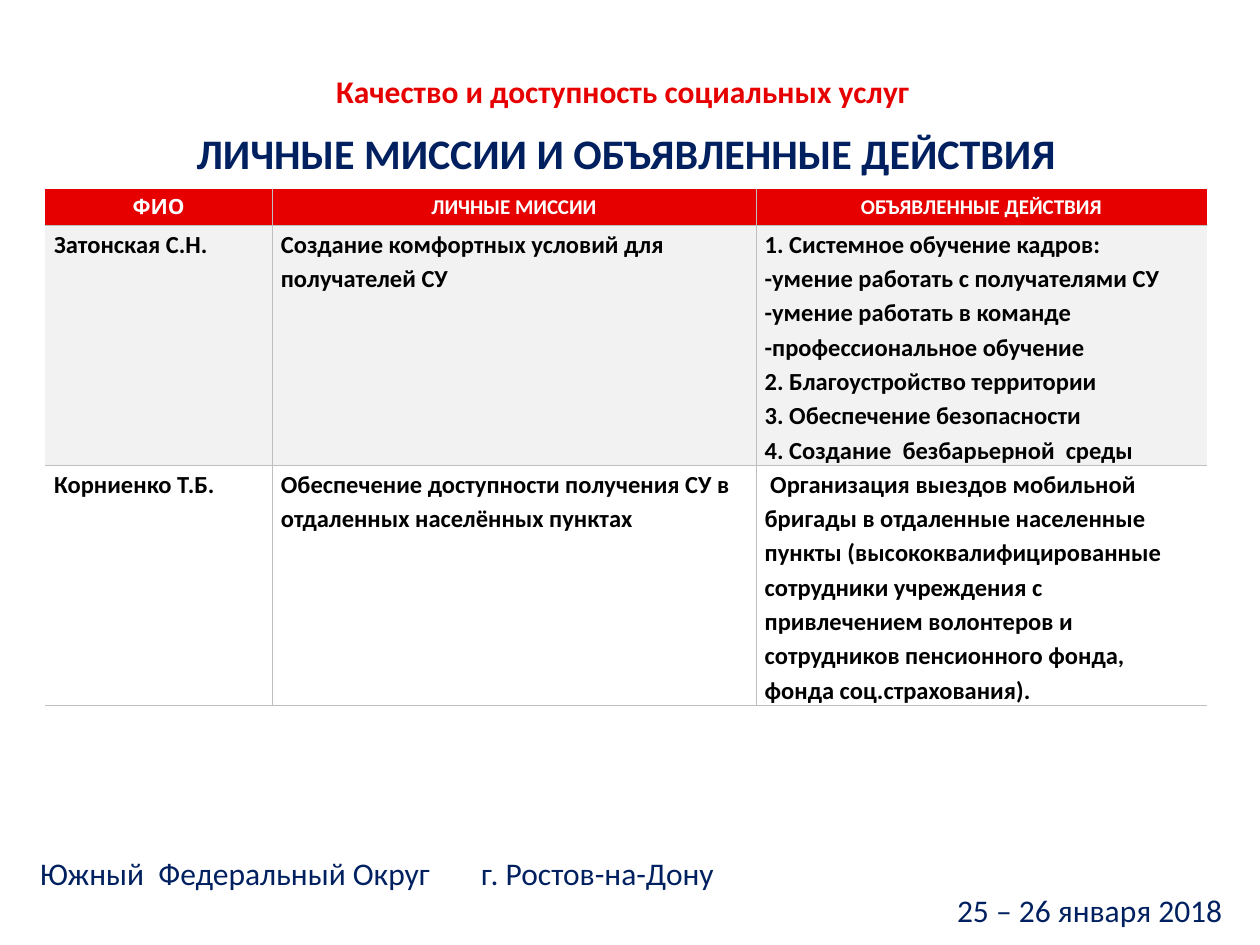
from lxml import etree
from pptx import Presentation
from pptx.dml.color import RGBColor
from pptx.enum.text import MSO_ANCHOR, MSO_AUTO_SIZE, PP_ALIGN
from pptx.oxml.ns import qn
from pptx.util import Inches, Pt

LEFT, MID, RIGHT = PP_ALIGN.LEFT, PP_ALIGN.CENTER, PP_ALIGN.RIGHT
TOP, CENTRE = MSO_ANCHOR.TOP, MSO_ANCHOR.MIDDLE
FIXED = MSO_AUTO_SIZE.NONE
WIDE, HIGH = Inches(10), Inches(7.5)
COLORS = {"red": "E60000", "navy": "002060", "white": "FFFFFF",
          "black": "000000", "band": "F2F2F2", "line": "BFBFBF"}
COLS = (19.52, 41.65, 38.83)
ROWS = (7.08, 46.46, 46.46)
HEADS = ("ФИО", "ЛИЧНЫЕ МИССИИ", "ОБЪЯВЛЕННЫЕ ДЕЙСТВИЯ")
PEOPLE = (
    ("Затонская С.Н.",
     "Создание комфортных условий для получателей СУ",
     "1. Системное обучение кадров:\n"
     "-умение работать с получателями СУ\n"
     "-умение работать в команде\n"
     "-профессиональное обучение\n"
     "2. Благоустройство территории\n"
     "3. Обеспечение безопасности\n"
     "4. Создание  безбарьерной  среды"),
    ("Корниенко Т.Б.",
     "Обеспечение доступности получения СУ в отдаленных населённых пунктах",
     " Организация выездов мобильной бригады в отдаленные населенные "
     "пункты (высококвалифицированные сотрудники учреждения с "
     "привлечением волонтеров и сотрудников пенсионного фонда, "
     "фонда соц.страхования)."),
)


def area(left, top, width, height):
    return (int(WIDE * left / 100), int(HIGH * top / 100),
            int(WIDE * width / 100), int(HIGH * height / 100))


def assign(item, values):
    for name, value in values.items():
        setattr(item, name, value)


def write(frame, text, color, size, bold=True, face="Calibri", **para):
    frame.text = text
    for line in frame.paragraphs:
        assign(line, para)
        for run in line.runs:
            assign(run.font, {"name": face, "size": Pt(size), "bold": bold})
            run.font.color.rgb = RGBColor.from_string(COLORS[color])


def heading(shape, box, text, color, size):
    assign(shape, dict(zip(("left", "top", "width", "height"), box)))
    frame = shape.text_frame
    assign(frame, {"word_wrap": False, "auto_size": FIXED,
                   "vertical_anchor": TOP})
    write(frame, text, color, size, alignment=LEFT)


def border(cell, sides):
    props = cell._tc.get_or_add_tcPr()
    for side in "LRTB":
        line = etree.SubElement(props, qn(f"a:ln{side}"), w=str(Pt(0.5)))
        if side in sides:
            fill = etree.SubElement(line, qn("a:solidFill"))
            etree.SubElement(fill, qn("a:srgbClr"), val=COLORS["line"])
        else:
            etree.SubElement(line, qn("a:noFill"))


def missions(slide, box):
    data = (HEADS, *PEOPLE)
    table = slide.shapes.add_table(len(ROWS), len(COLS), *box).table
    assign(table, {"first_row": False, "horz_banding": False})
    for col, share in zip(table.columns, COLS):
        col.width = int(box[2] * share / 100)
    for row, share in zip(table.rows, ROWS):
        row.height = int(box[3] * share / 100)
    for r, texts in enumerate(data):
        for c, text in enumerate(texts):
            cell = table.cell(r, c)
            head = r == 0
            pad = Inches(0.04 if head else 0)
            assign(cell, {"margin_left": Inches(0.07),
                          "margin_right": Inches(0.07),
                          "margin_top": pad, "margin_bottom": pad,
                          "vertical_anchor": CENTRE if head else TOP})
            border(cell, "B" + "T" * (r > 0) + "L" * (c > 0)
                   + "R" * (c < len(COLS) - 1))
            if r < 2:
                cell.fill.solid()
                tint = COLORS["red" if head else "band"]
                cell.fill.fore_color.rgb = RGBColor.from_string(tint)
            else:
                cell.fill.background()
            if head:
                write(cell.text_frame, text, "white", 12, alignment=MID,
                      face="Calibri" if c else "Cabin")
            else:
                write(cell.text_frame, text, "black", 14, alignment=LEFT,
                      line_spacing=1.15)


def footer(slide, box):
    frame = slide.shapes.add_textbox(*box).text_frame
    assign(frame, {"word_wrap": True, "vertical_anchor": CENTRE})
    write(frame, "Южный  Федеральный Округ\tг. Ростов-на-Дону\n"
          "25 – 26 января 2018", "navy", 18, bold=False)
    place, date = frame.paragraphs
    date.alignment = RIGHT
    props = place._p.get_or_add_pPr()
    props.set("marL", str(Inches(0.09)))
    props.set("indent", "0")
    tabs = etree.SubElement(props, qn("a:tabLst"))
    etree.SubElement(tabs, qn("a:tab"), pos=str(int(box[2] * 0.97)), algn="r")


def main():
    deck = Presentation()
    assign(deck, {"slide_width": WIDE, "slide_height": HIGH})
    slide = deck.slides.add_slide(deck.slide_layouts[5])
    missions(slide, area(3.6, 20, 92.2, 54.67))
    heading(slide.shapes.title, area(14.6, 12.8, 70.9, 6.67),
            "ЛИЧНЫЕ МИССИИ И ОБЪЯВЛЕННЫЕ ДЕЙСТВИЯ", "navy", 24)
    footer(slide, area(1.3, 90.4, 96.7, 7.87))
    box = area(25.7, 6.93, 47.9, 5.33)
    heading(slide.shapes.add_textbox(*box), box,
            "Качество и доступность социальных услуг", "red", 18)
    deck.save("out.pptx")


if __name__ == "__main__":
    main()
